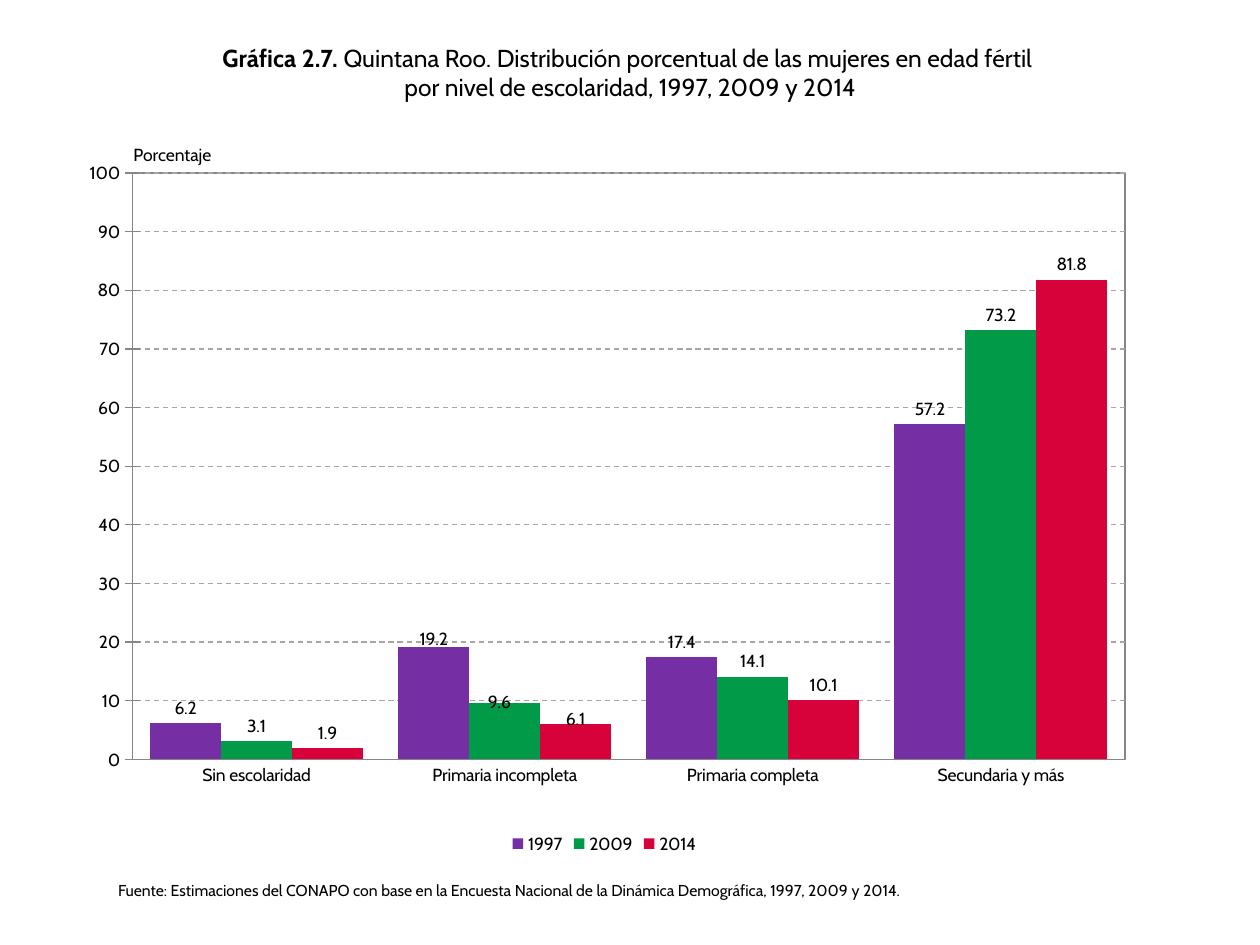
from lxml.etree import SubElement
from pptx import Presentation
from pptx.chart.data import CategoryChartData
from pptx.dml.color import RGBColor
from pptx.enum.chart import XL_CHART_TYPE, XL_LABEL_POSITION, XL_LEGEND_POSITION, XL_TICK_MARK
from pptx.enum.dml import MSO_LINE
from pptx.enum.text import PP_ALIGN
from pptx.oxml import parse_xml
from pptx.oxml.ns import nsdecls, qn
from pptx.util import Cm, Pt

BLACK = RGBColor(0x00, 0x00, 0x00)
GRID = RGBColor(0xA6, 0xA6, 0xA6)
AXIS = RGBColor(0x86, 0x86, 0x86)
PURPLE = RGBColor(0x76, 0x2E, 0xA4)
GREEN = RGBColor(0x00, 0x9A, 0x48)
RED = RGBColor(0xD7, 0x02, 0x3A)
FONT = "Cabin"

# Content: each text box has a place in cm, a size, an alignment and lines of (text, bold) runs
TEXTS = [
    ((0.71, 0.74, 24.0, 1.45), 14, PP_ALIGN.CENTER, [
        [("Gráfica 2.7. ", True),
         ("Quintana Roo. Distribución porcentual de las mujeres en edad fértil ", False)],
        [("por nivel de escolaridad, 1997, 2009 y 2014", False)]]),
    ((2.44, 2.77, 2.84, 0.69), 10, PP_ALIGN.LEFT, [[("Porcentaje", False)]]),
    ((2.13, 17.63, 21.11, 0.64), 9, PP_ALIGN.LEFT, [
        [("Fuente: Estimaciones del CONAPO con base en la Encuesta Nacional "
          "de la Dinámica Demográfica, 1997, 2009 y 2014.", False)]]),
]
CATEGORIES = ["Sin escolaridad", "Primaria incompleta", "Primaria completa", "Secundaria y más"]
# name, values, colour, shift (x, y) of the "Primaria incompleta" label
SERIES = [
    ("1997", (6.2, 19.2, 17.4, 57.2), PURPLE, (0, 0.01)),
    ("2009", (3.1, 9.6, 14.1, 73.2), GREEN, (-0.005, 0.02)),
    ("2014", (1.9, 6.1, 10.1, 81.8), RED, (0, 0.015)),
]
CHART_BOX = (1.3, 2.97, 21.77, 14.35)
PLOT = {"x": 0.063, "y": 0.036, "w": 0.919, "h": 0.824}


def set_font(font, size, bold=False):
    for name, value in {"name": FONT, "size": Pt(size), "bold": bold}.items():
        setattr(font, name, value)
    font.color.rgb = BLACK


def make_layout(values, **modes):
    """Manual chart layout from modes and fractions of the chart area."""
    layout = parse_xml(f"<c:layout {nsdecls('c')}/>")
    manual = SubElement(layout, qn("c:manualLayout"))
    for tag, value in {**modes, **values}.items():
        SubElement(manual, qn(f"c:{tag}")).set("val", str(value))
    return layout


def add_text(slide, box, size, align, lines):
    tf = slide.shapes.add_textbox(*map(Cm, box)).text_frame
    tf.word_wrap = True
    p = tf.paragraphs[0]
    p.alignment = align
    for i, line in enumerate(lines):
        if i:
            p.add_line_break()
        for text, bold in line:
            r = p.add_run()
            r.text = text
            set_font(r.font, size, bold)


def add_bars(slide):
    data = CategoryChartData(number_format="0.0")
    data.categories = CATEGORIES
    for name, values, *_ in SERIES:
        data.add_series(name, values)
    chart = slide.shapes.add_chart(
        XL_CHART_TYPE.COLUMN_CLUSTERED, *map(Cm, CHART_BOX), data).chart
    set_font(chart.font, 10)
    chart.has_title = False
    chart.has_legend = True
    chart.legend.position = XL_LEGEND_POSITION.BOTTOM
    chart.legend.include_in_layout = False

    # Axes and gridlines
    cat, val = chart.category_axis, chart.value_axis
    cat.major_tick_mark = XL_TICK_MARK.NONE
    val.major_tick_mark = XL_TICK_MARK.CROSS
    val.minimum_scale, val.maximum_scale, val.major_unit = 0, 100, 10
    val.tick_labels.number_format = "#,##0"
    val.tick_labels.number_format_is_linked = False
    grid = val.major_gridlines.format.line
    for line, color in ((cat.format.line, AXIS), (val.format.line, AXIS), (grid, GRID)):
        line.color.rgb = color
        line.width = Pt(0.75)
    grid.dash_style = MSO_LINE.DASH

    # Bars and their labels
    plot = chart.plots[0]
    plot.gap_width, plot.overlap, plot.vary_by_categories = 50, 0, False
    for s, (_, _, color, (dx, dy)) in zip(plot.series, SERIES):
        s.format.fill.solid()
        s.format.fill.fore_color.rgb = color
        labels = s.data_labels
        labels.show_value = True
        labels.number_format = "0.0"
        labels.number_format_is_linked = False
        labels.position = XL_LABEL_POSITION.OUTSIDE_END
        set_font(labels.font, 10)
        label = s.points[1].data_label
        set_font(label.font, 10)
        label.position = XL_LABEL_POSITION.OUTSIDE_END
        idx = s._element.find(f".//{qn('c:dLbl')}/{qn('c:idx')}")
        idx.addnext(make_layout({"x": dx, "y": dy}))

    # Plot area place and frame
    area = chart._chartSpace.chart.plotArea
    for old in area.findall(qn("c:layout")):
        area.remove(old)
    area.insert(0, make_layout(PLOT, layoutTarget="inner", xMode="edge", yMode="edge"))
    area.append(parse_xml(
        f'<c:spPr {nsdecls("c", "a")}><a:noFill/><a:ln w="9525"><a:solidFill>'
        f'<a:srgbClr val="{AXIS}"/></a:solidFill></a:ln></c:spPr>'))


def main():
    prs = Presentation()
    prs.slide_width, prs.slide_height = Cm(25.4), Cm(19.05)
    slide = prs.slides.add_slide(prs.slide_layouts[6])
    for text in TEXTS:
        add_text(slide, *text)
    add_bars(slide)
    prs.save("out.pptx")


if __name__ == "__main__":
    main()
